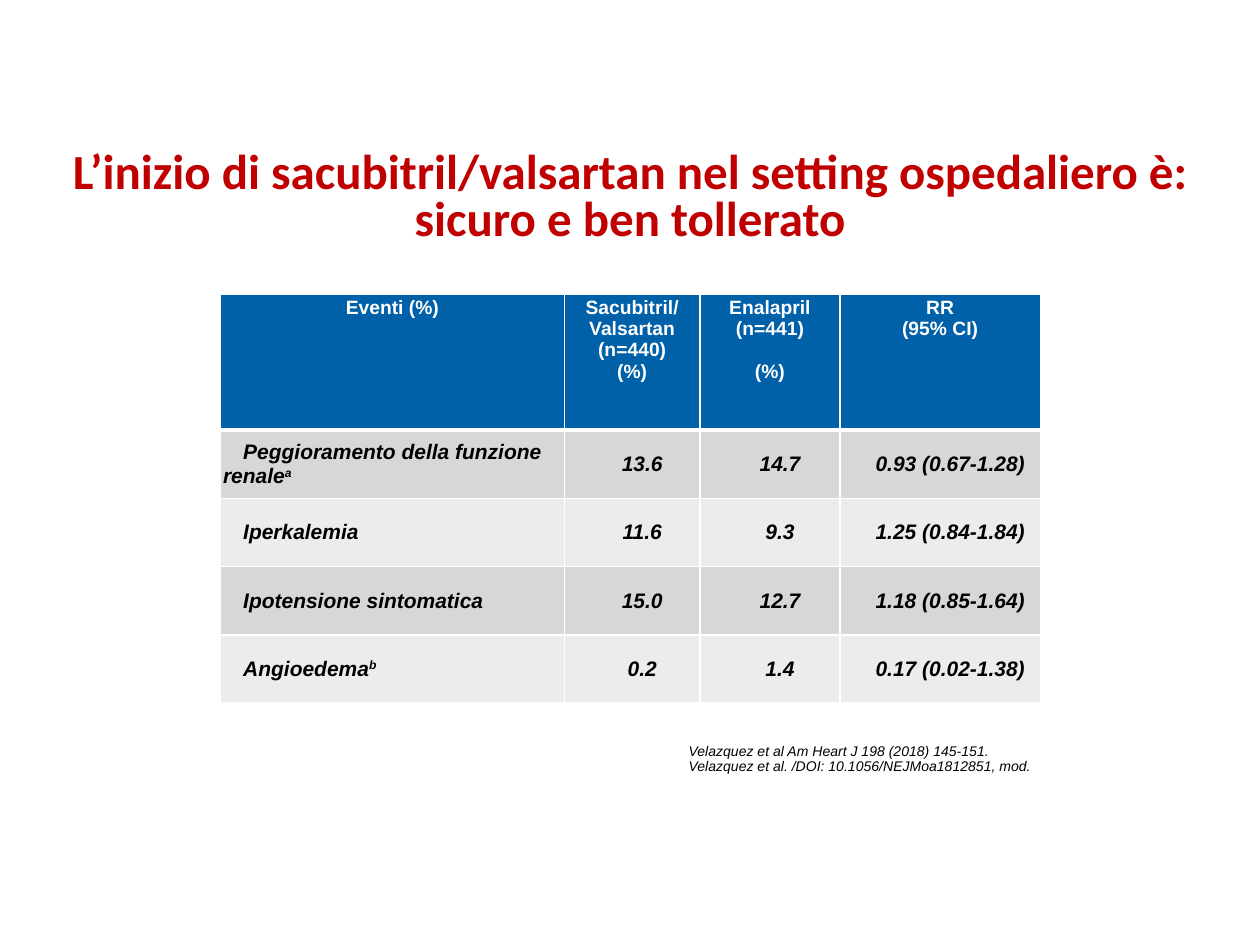
"""Build a slide with a table of adverse events for two heart failure treatments."""
import pptx
import pptx.dml.color
import pptx.enum.text
import pptx.oxml
import pptx.oxml.ns
import pptx.util

Pt = pptx.util.Pt
RGBColor = pptx.dml.color.RGBColor
Align = pptx.enum.text.PP_ALIGN
Anchor = pptx.enum.text.MSO_ANCHOR

RED = RGBColor(0xC0, 0x00, 0x00)
BLUE = RGBColor(0x00, 0x60, 0xA8)
WHITE = RGBColor(0xFF, 0xFF, 0xFF)
BLACK = RGBColor(0x00, 0x00, 0x00)
BANDS = (RGBColor(0xD7, 0xD7, 0xD7), RGBColor(0xEC, 0xEC, 0xEC))

COLUMN_WIDTHS = (196.5, 77.5, 80, 114.5)
HEADER_HEIGHT, ROW_HEIGHT = 77.8, 39
HEADERS = (
    ("Eventi (%)", 0),
    ("Sacubitril/\vValsartan\v(n=440)\n(%)", 0),
    ("Enalapril\v(n=441)\n(%)", 12.65),
    ("RR\v(95% CI)", 0),
)
EVENTS = (
    ("Peggioramento della funzione renale^a", "13.6", "14.7", "0.93 (0.67-1.28)"),
    ("Iperkalemia", "11.6", "9.3", "1.25 (0.84-1.84)"),
    ("Ipotensione sintomatica", "15.0", "12.7", "1.18 (0.85-1.64)"),
    ("Angioedema^b", "0.2", "1.4", "0.17 (0.02-1.38)"),
)


def write_text(frame, text, *, size, color, font="Arial", bold=False, italic=False,
               align=Align.LEFT, spacing=1.0, gap=0, indent=0):
    """Fill a frame; newline starts a paragraph, \\v breaks a line, ^ raises what follows."""
    for number, content in enumerate(text.split("\n")):
        para = frame.add_paragraph() if number else frame.paragraphs[0]
        para.alignment = align
        para.line_spacing = spacing
        para.space_before = Pt(gap if number else 0)
        para._p.get_or_add_pPr().set("indent", str(int(Pt(indent))))
        for line_number, line in enumerate(content.split("\v")):
            if line_number:
                para.add_line_break()
            for part_number, part in enumerate(line.split("^")):
                span = para.add_run()
                span.text = part
                span.font.name, span.font.size = font, Pt(size)
                span.font.bold, span.font.italic = bold, italic
                span.font.color.rgb = color
                if part_number:
                    span._r.get_or_add_rPr().set("baseline", "30000")


class SlideWriter:
    """Hold the table style and the current page."""

    border_color = WHITE
    thin, thick = 1, 3
    cell_margin = 1.5

    def __init__(self, page):
        self.page = page

    def text(self, left, top, width, height, text, *, margin=0, anchor=Anchor.TOP, **style):
        """Add a wrapped text box."""
        box = self.page.shapes.add_textbox(Pt(left), Pt(top), Pt(width), Pt(height))
        frame = box.text_frame
        frame.word_wrap = True
        frame.vertical_anchor = anchor
        frame.margin_left = frame.margin_right = Pt(margin)
        frame.margin_top = frame.margin_bottom = Pt(margin)
        write_text(frame, text, **style)

    def table(self, left, top, widths, heights):
        """Add an unstyled table with the given column widths and row heights."""
        grid = self.page.shapes.add_table(
            len(heights), len(widths), Pt(left), Pt(top), Pt(sum(widths)), Pt(sum(heights))
        ).table
        grid.first_row = grid.horz_banding = False
        for column, width in zip(grid.columns, widths):
            column.width = Pt(width)
        for row, height in zip(grid.rows, heights):
            row.height = Pt(height)
        return grid

    def cell(self, cell, text, fill, *, top=thin, bottom=thin, anchor=Anchor.TOP, **style):
        """Write one table cell with its borders and fill."""
        cell.margin_left = cell.margin_right = Pt(self.cell_margin)
        cell.margin_top = cell.margin_bottom = Pt(self.cell_margin)
        cell.vertical_anchor = anchor
        properties = cell._tc.get_or_add_tcPr()
        for side, width in (("L", self.thin), ("R", self.thin), ("T", top), ("B", bottom)):
            properties.append(pptx.oxml.parse_xml(
                f'<a:ln{side} {pptx.oxml.ns.nsdecls("a")} w="{int(Pt(width))}"><a:solidFill>'
                f'<a:srgbClr val="{self.border_color}"/></a:solidFill></a:ln{side}>'
            ))
        cell.fill.solid()
        cell.fill.fore_color.rgb = fill
        write_text(cell.text_frame, text, bold=True, **style)


def main():
    deck = pptx.Presentation()
    deck.slide_width, deck.slide_height = Pt(720), Pt(540)
    writer = SlideWriter(deck.slides.add_slide(deck.slide_layouts[6]))

    writer.text(
        0, 87, 720, 27,
        "L’inizio di sacubitril/valsartan nel setting ospedaliero è:\nsicuro e ben tollerato",
        size=28, color=RED, font="Calibri", bold=True, align=Align.CENTER, spacing=0.8,
    )

    heights = (HEADER_HEIGHT,) + (ROW_HEIGHT,) * len(EVENTS)
    grid = writer.table(126, 168, COLUMN_WIDTHS, heights)
    for column, (header, gap) in enumerate(HEADERS):
        writer.cell(grid.cell(0, column), header, BLUE, bottom=writer.thick,
                    size=11, color=WHITE, align=Align.CENTER, gap=gap)
    for row, event in enumerate(EVENTS, start=1):
        for column, value in enumerate(event):
            writer.cell(
                grid.cell(row, column), value, BANDS[(row - 1) % 2],
                top=writer.thick if row == 1 else writer.thin, anchor=Anchor.MIDDLE,
                size=12, color=BLACK, italic=True, indent=11.5,
                align=Align.CENTER if column else Align.LEFT,
            )

    writer.text(
        391.5, 405.5, 202.5, 39,
        "Velazquez et al Am Heart J 198 (2018) 145-151.\n"
        "Velazquez et al. /DOI: 10.1056/NEJMoa1812851, mod.",
        margin=2, anchor=Anchor.BOTTOM, size=8, color=BLACK, italic=True, spacing=0.9,
    )
    deck.save("out.pptx")


if __name__ == "__main__":
    main()
